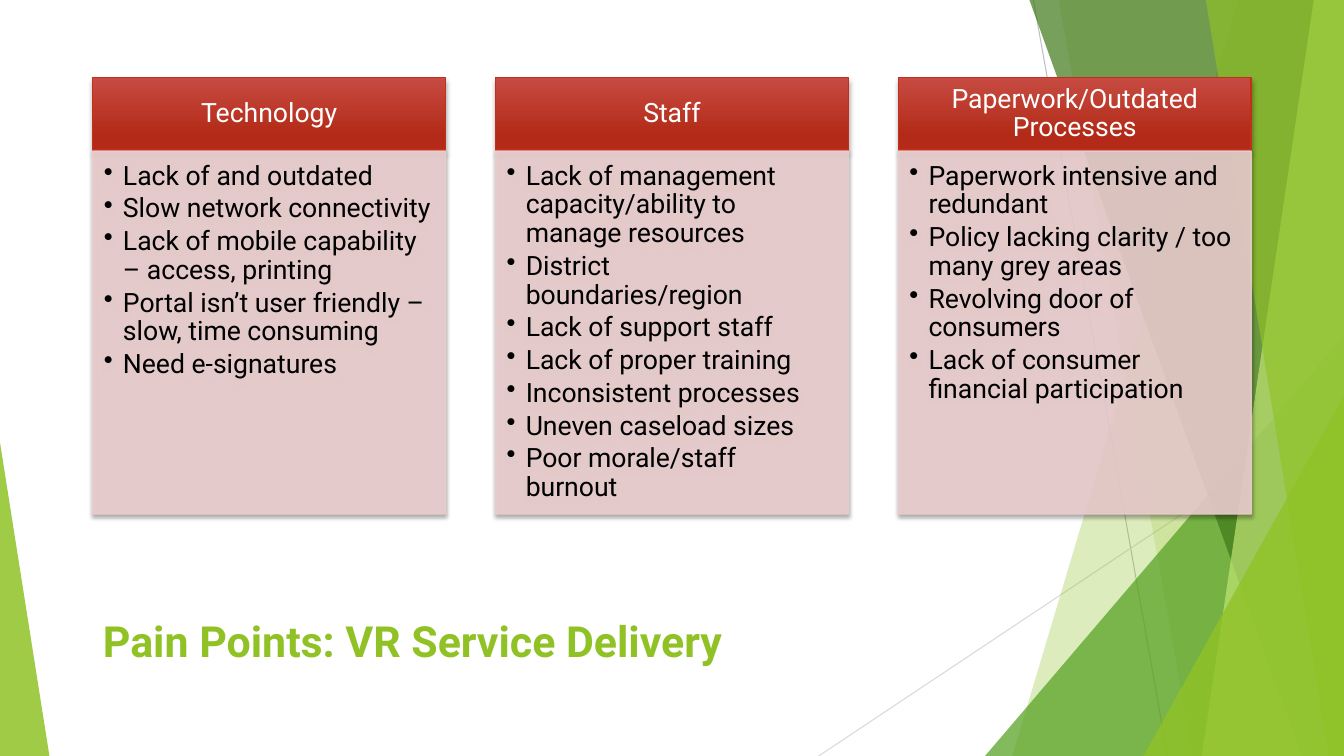
from lxml import etree
from pptx import Presentation
from pptx.dml.color import RGBColor
from pptx.enum.shapes import MSO_CONNECTOR, MSO_SHAPE
from pptx.enum.text import MSO_ANCHOR, MSO_AUTO_SIZE, PP_ALIGN
from pptx.oxml.ns import qn
from pptx.util import Emu, Inches, Pt

STRAIGHT = MSO_CONNECTOR.STRAIGHT
RECTANGLE, TRIANGLE = MSO_SHAPE.RECTANGLE, MSO_SHAPE.ISOSCELES_TRIANGLE
TOP, MIDDLE = MSO_ANCHOR.TOP, MSO_ANCHOR.MIDDLE
LEFT, CENTER = PP_ALIGN.LEFT, PP_ALIGN.CENTER
NO_AUTOFIT = MSO_AUTO_SIZE.NONE

GREEN = "90C226"
WIDTH, HEIGHT = 13.33, 7.5
CARD_LEFT, CARD_TOP, CARD_WIDTH, CARD_STEP = 0.92, 0.77, 3.5, 3.995
HEADER_HEIGHT, LIST_TOP, LIST_HEIGHT = 0.72, 1.5, 3.6

GUIDE_LINES = [
    (10.25, 0, 11.58, HEIGHT, "BFBFBF"),
    (WIDTH, 4.03, 8.12, HEIGHT, "D9D9D9"),
]
BACK_BANDS = [(12.28, 10.04, GREEN, 30), (10.5, 11.83, GREEN, 20)]
FRONT_BANDS = [
    (10.21, 12.91, "3F7819", 70),
    (13.03, 11.92, "C0E474", 70),
    (11.96, 13.18, GREEN, 65),
]
PAIN_POINTS = [
    ("Technology", [
        "Lack of and outdated",
        "Slow network connectivity",
        "Lack of mobile capability – access, printing",
        "Portal isn’t user friendly – slow, time consuming",
        "Need e-signatures",
    ]),
    ("Staff", [
        "Lack of management capacity/ability to manage resources",
        "District boundaries/region",
        "Lack of support staff",
        "Lack of proper training",
        "Inconsistent processes",
        "Uneven caseload sizes",
        "Poor morale/staff burnout",
    ]),
    ("Paperwork/Outdated Processes", [
        "Paperwork intensive and redundant",
        "Policy lacking clarity / too many grey areas",
        "Revolving door of consumers",
        "Lack of consumer financial participation",
    ]),
]


def color(hex_code):
    """Turn a hex string into a colour."""
    return RGBColor.from_string(hex_code)


class SlideBuilder:
    """Hold the text style and the slide being drawn."""

    font = "Roboto"
    text_size = 19

    def __init__(self, slide):
        """Keep the slide to draw on."""
        self.slide = slide

    def set_alpha(self, shape, percent):
        """Make the colours of a shape partly transparent."""
        for tint in shape._element.spPr.iter(qn("a:srgbClr")):
            etree.SubElement(tint, qn("a:alpha"), val=str(percent * 1000))

    def add_shadow(self, shape, distance):
        """Cast a soft shadow straight down."""
        effects = shape._element.spPr.find(qn("a:effectLst"))
        shadow = etree.SubElement(
            effects, qn("a:outerShdw"), blurRad=str(Pt(distance + 1)),
            dist=str(Pt(distance)), dir="5400000", algn="ctr", rotWithShape="0")
        tint = etree.SubElement(shadow, qn("a:srgbClr"), val="000000")
        etree.SubElement(tint, qn("a:alpha"), val="35000")

    def guide_line(self, x1, y1, x2, y2, line_color):
        """Draw a thin background line."""
        line = self.slide.shapes.add_connector(
            STRAIGHT, Inches(x1), Inches(y1), Inches(x2), Inches(y2))
        line.line.color.rgb = color(line_color)
        line.line.width = Pt(0.75)
        etree.SubElement(line._element.spPr, qn("a:effectLst"))

    def paint_facet(self, facet, fill_color, alpha):
        """Give a background facet its see-through fill."""
        facet.shadow.inherit = False
        facet.fill.solid()
        facet.fill.fore_color.rgb = color(fill_color)
        facet.line.fill.background()
        self.set_alpha(facet, alpha)

    def band(self, top_x, bottom_x, fill_color, alpha):
        """Draw a facet that reaches the right edge of the slide."""
        corners = [(WIDTH, 0), (WIDTH, HEIGHT), (bottom_x, HEIGHT)]
        outline = self.slide.shapes.build_freeform(Inches(top_x), 0)
        outline.add_line_segments([(Inches(x), Inches(y)) for x, y in corners])
        self.paint_facet(outline.convert_to_shape(Emu(0), Emu(0)), fill_color, alpha)

    def triangle(self, left, top, width, apex, fill_color, alpha):
        """Draw a right triangle standing on the bottom edge."""
        facet = self.slide.shapes.add_shape(
            TRIANGLE, Inches(left), Inches(top), Inches(width), Inches(HEIGHT - top))
        facet.adjustments[0] = apex
        self.paint_facet(facet, fill_color, alpha)

    def add_run(self, paragraph, words, text_color, size, bold=False):
        """Add one run in the slide's font."""
        run = paragraph.add_run()
        run.text = words
        run.font.name = self.font
        run.font.size = Pt(size)
        run.font.bold = bold
        run.font.color.rgb = color(text_color)

    def title(self, words):
        """Move and fill the title placeholder."""
        heading = self.slide.shapes.title
        heading.left, heading.top = Inches(0.92), Inches(6.05)
        heading.width, heading.height = Inches(8.83), Inches(1.2)
        frame = heading.text_frame
        frame.auto_size = NO_AUTOFIT
        frame.vertical_anchor = TOP
        frame.paragraphs[0].alignment = LEFT
        self.add_run(frame.paragraphs[0], words, GREEN, 30.6, bold=True)

    def panel(self, left, top, height, insets, anchor):
        """Add one rectangle of a card with its text margins."""
        panel = self.slide.shapes.add_shape(
            RECTANGLE, Inches(left), Inches(top), Inches(CARD_WIDTH), Inches(height))
        panel.shadow.inherit = False
        panel.line.width = Pt(1)
        frame = panel.text_frame
        frame.word_wrap = True
        frame.vertical_anchor = anchor
        (frame.margin_left, frame.margin_top,
         frame.margin_right, frame.margin_bottom) = map(Inches, insets)
        return panel

    def card_header(self, left, words):
        """Draw the red heading of a card."""
        header = self.panel(left, CARD_TOP, HEADER_HEIGHT, (0.15, 0.08, 0.15, 0.08), MIDDLE)
        header.fill.gradient()
        header.fill.gradient_angle = 270
        shades = [(0, "C74B42"), (0.78, "B32B18")]
        for stop, (position, shade) in zip(header.fill.gradient_stops, shades):
            stop.position = position
            stop.color.rgb = color(shade)
        header.line.color.rgb = color("C42F1A")
        self.add_shadow(header, 3)
        paragraph = header.text_frame.paragraphs[0]
        paragraph.alignment = CENTER
        paragraph.line_spacing = 0.9
        self.add_run(paragraph, words, "FFFFFF", self.text_size)

    def card_list(self, left, points):
        """Draw the pink bulleted list of a card."""
        body = self.panel(left, LIST_TOP, LIST_HEIGHT, (0.11, 0.11, 0.15, 0.17), TOP)
        body.fill.solid()
        body.fill.fore_color.rgb = color("EACDCD")
        body.line.color.rgb = color("EACDCD")
        self.set_alpha(body, 90)
        self.add_shadow(body, 2)
        frame = body.text_frame
        for index, point in enumerate(points):
            paragraph = frame.add_paragraph() if index else frame.paragraphs[0]
            properties = paragraph._p.get_or_add_pPr()
            properties.set("marL", str(Inches(0.19)))
            properties.set("indent", str(Inches(-0.19)))
            etree.SubElement(properties, qn("a:buChar"), char="•")
            paragraph.alignment = LEFT
            paragraph.line_spacing = 0.9
            paragraph.space_after = Pt(2.85)
            self.add_run(paragraph, point, "000000", self.text_size)


def main():
    """Build and save the slide."""
    deck = Presentation()
    deck.slide_width, deck.slide_height = Inches(WIDTH), Inches(HEIGHT)
    builder = SlideBuilder(deck.slides.add_slide(deck.slide_layouts[5]))
    for guide in GUIDE_LINES:
        builder.guide_line(*guide)
    for band in BACK_BANDS:
        builder.band(*band)
    builder.triangle(9.77, 3.33, 3.56, 1, "54A021", 72)
    for band in FRONT_BANDS:
        builder.band(*band)
    builder.triangle(11.34, 3.93, 1.99, 1, GREEN, 80)
    builder.triangle(0, 4.39, 0.49, 0, GREEN, 85)
    builder.title("Pain Points: VR Service Delivery")
    for column, (heading, points) in enumerate(PAIN_POINTS):
        left = CARD_LEFT + column * CARD_STEP
        builder.card_header(left, heading)
        builder.card_list(left, points)
    deck.save("out.pptx")


if __name__ == "__main__":
    main()
